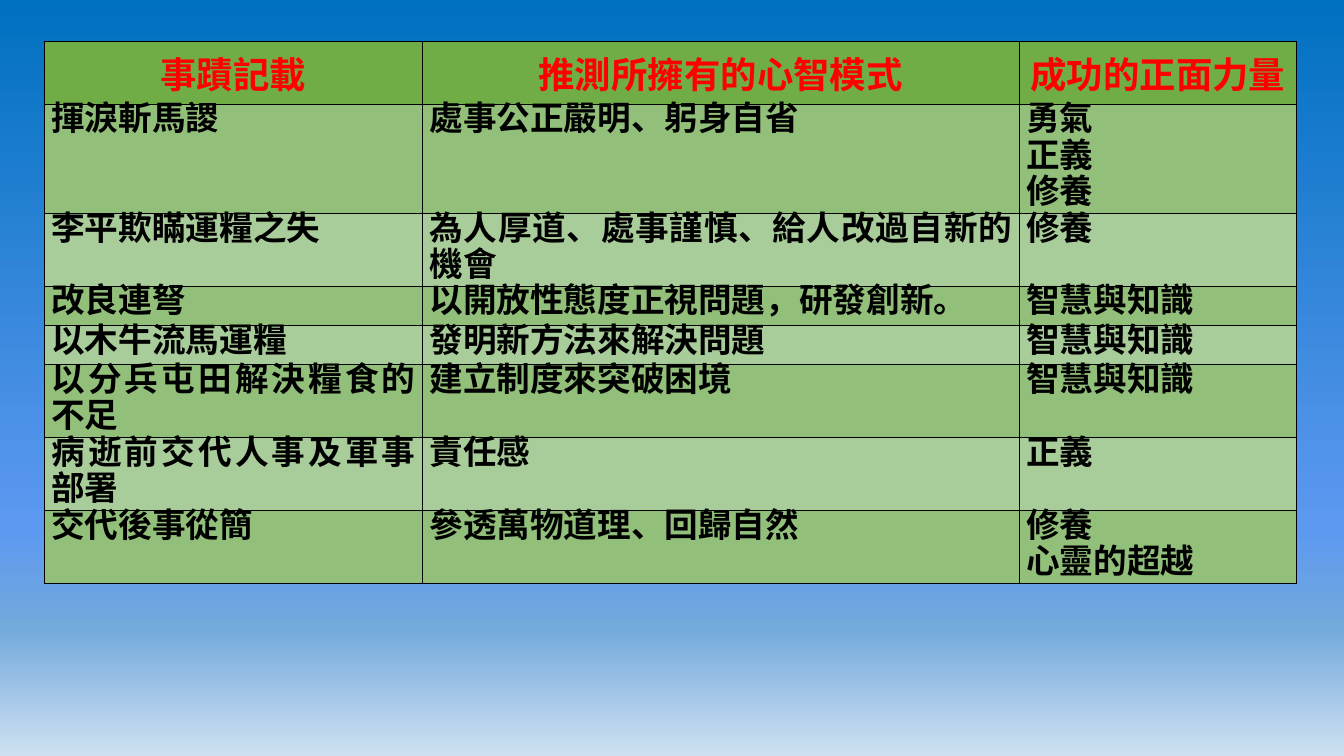
from lxml.etree import SubElement
from pptx import Presentation
from pptx.dml.color import RGBColor
from pptx.enum.text import PP_ALIGN
from pptx.oxml import parse_xml
from pptx.oxml.ns import nsdecls, qn
from pptx.util import Inches, Pt

FONT = "Noto Sans CJK SC"
COLORS = {
    "header": "70AD47",
    "dark band": "92C07A",
    "light band": "A9CD9A",
    "header text": "FF0000",
    "body text": "000000",
    "border": "000000",
}
SKY = [(0, "0070C0"), (70, "5D99F1"), (83, "73A9DB"), (100, "CEE1F2")]
COLUMN_WIDTHS = [3.75, 5.92, 2.75]
HEADINGS = ["事蹟記載", "推測所擁有的心智模式", "成功的正面力量"]
# Row height in inches, deed, mindset, strengths
DEEDS = [
    (1.08, "揮淚斬馬謖", "處事公正嚴明、躬身自省", "勇氣\n正義\n修養"),
    (0.72, "李平欺瞞運糧之失", "為人厚道、處事謹慎、給人改過自新的機會", "修養"),
    (0.39, "改良連弩", "以開放性態度正視問題，研發創新。", "智慧與知識"),
    (0.39, "以木牛流馬運糧", "發明新方法來解決問題", "智慧與知識"),
    (0.72, "以分兵屯田解決糧食的不足", "建立制度來突破困境", "智慧與知識"),
    (0.72, "病逝前交代人事及軍事部署", "責任感", "正義"),
    (0.72, "交代後事從簡", "參透萬物道理、回歸自然", "修養\n心靈的超越"),
]


def set_gradient_background(page, stops):
    """Fill the page from top to bottom with (percent, colour) stops."""
    page.background.fill.solid()
    solid = next(page.background._cSld.iter(qn("a:solidFill")))
    stop_xml = "".join(
        f'<a:gs pos="{percent * 1000}"><a:srgbClr val="{color}"/></a:gs>'
        for percent, color in stops
    )
    gradient = parse_xml(
        f'<a:gradFill {nsdecls("a")} rotWithShape="1"><a:gsLst>{stop_xml}</a:gsLst>'
        '<a:lin ang="5400000" scaled="0"/></a:gradFill>'
    )
    solid.getparent().replace(solid, gradient)


def write_text(frame, text, *, size, color, align, line_spacing=None):
    """Write one bold paragraph for each line of the text."""
    for index, line in enumerate(text.split("\n")):
        para = frame.add_paragraph() if index else frame.paragraphs[0]
        para.alignment = align
        if line_spacing:
            para.line_spacing = Pt(line_spacing)
        span = para.add_run()
        span.text = line
        span.font.size = Pt(size)
        span.font.bold = True
        span.font.name = FONT
        span.font.color.rgb = RGBColor.from_string(COLORS[color])
        SubElement(span.font._element, qn("a:ea"), typeface=FONT)


def paint_cell(cell, fill):
    """Fill the cell and draw a thin border on its four sides."""
    cell.fill.solid()
    cell.fill.fore_color.rgb = RGBColor.from_string(COLORS[fill])
    properties = cell._tc.get_or_add_tcPr()
    for index, side in enumerate("LRTB"):
        border = parse_xml(
            f'<a:ln{side} {nsdecls("a")} w="12700"><a:solidFill>'
            f'<a:srgbClr val="{COLORS["border"]}"/></a:solidFill></a:ln{side}>'
        )
        properties.insert(index, border)


def fill_header(table):
    table.rows[0].height = Inches(0.62)
    for column, heading in enumerate(HEADINGS):
        cell = table.cell(0, column)
        paint_cell(cell, "header")
        write_text(cell.text_frame, heading, size=26, color="header text",
                   align=PP_ALIGN.CENTER)


def fill_deed(table, row, height, texts):
    table.rows[row].height = Inches(height)
    for column, text in enumerate(texts):
        cell = table.cell(row, column)
        cell.margin_left = cell.margin_right = Inches(0.07)
        cell.margin_top = cell.margin_bottom = 0
        paint_cell(cell, "dark band" if row % 2 else "light band")
        align = PP_ALIGN.LEFT if column == 2 else PP_ALIGN.JUSTIFY
        write_text(cell.text_frame, text, size=24, color="body text",
                   align=align, line_spacing=26)


def add_deeds_table(page):
    table = page.shapes.add_table(
        len(DEEDS) + 1, len(HEADINGS), Inches(0.44), Inches(0.41),
        Inches(sum(COLUMN_WIDTHS)), Inches(5.36),
    ).table
    for column, width in zip(table.columns, COLUMN_WIDTHS):
        column.width = Inches(width)
    fill_header(table)
    for row, (height, *texts) in enumerate(DEEDS, start=1):
        fill_deed(table, row, height, texts)


def main():
    deck = Presentation()
    deck.slide_width = Inches(13.33)
    deck.slide_height = Inches(7.5)
    page = deck.slides.add_slide(deck.slide_layouts[6])
    set_gradient_background(page, SKY)
    add_deeds_table(page)
    deck.save("out.pptx")


if __name__ == "__main__":
    main()
